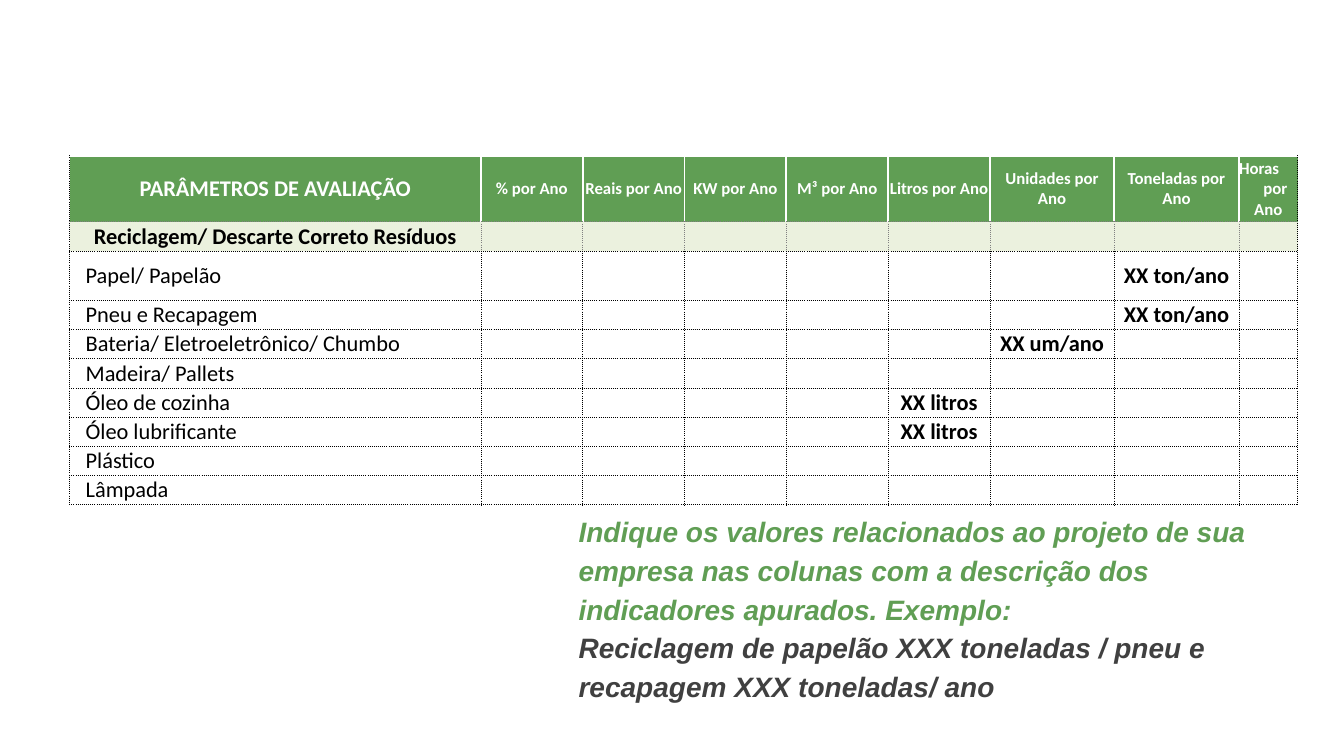
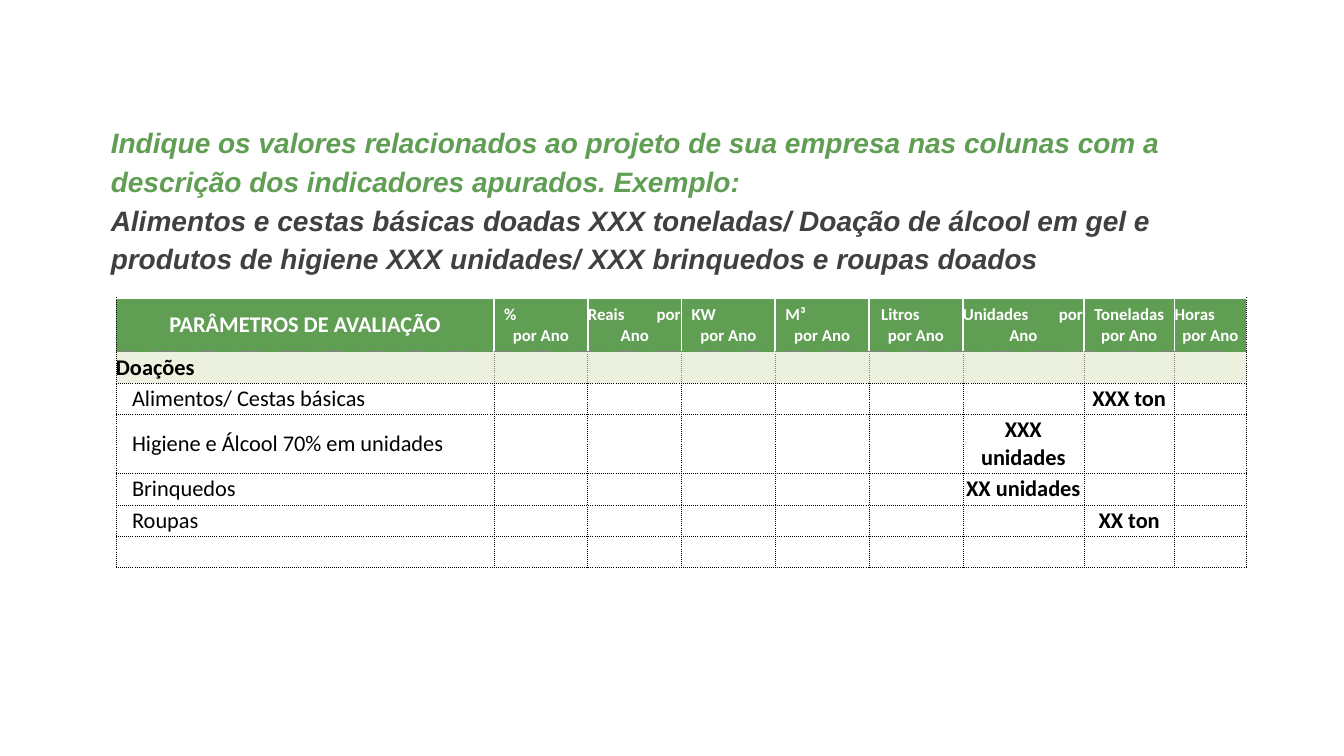
from lxml import etree
from pptx import Presentation
from pptx.dml.color import RGBColor
from pptx.enum import text
from pptx.oxml.ns import qn
from pptx.util import Inches, Pt

GREEN = RGBColor(0x60, 0x9E, 0x54)
PALE_GREEN = RGBColor(0xEB, 0xF1, 0xDE)
WHITE = RGBColor(0xFF, 0xFF, 0xFF)
BLACK = RGBColor(0, 0, 0)
GREY = RGBColor(0x80, 0x80, 0x80)
DARK = RGBColor(0x40, 0x40, 0x40)

LEFT, CENTER = text.PP_ALIGN.LEFT, text.PP_ALIGN.CENTER
BLACK_DOTS = (BLACK, 0.5, "dot")
GREY_DOTS = (GREY, 0.5, "dot")
WHITE_LINE = (WHITE, 1.5, "solid")

FIRST_HEADER = "PARÂMETROS DE AVALIAÇÃO"
PROMPT = ("Indique os valores relacionados ao projeto de sua empresa nas colunas "
          "com a descrição dos indicadores apurados. Exemplo:")
LITRES, UNITS, TONS = 5, 6, 7


def set_borders(cell, borders):
    """Draw the left, right, top and bottom borders, in that order."""
    tc_pr = cell._tc.get_or_add_tcPr()
    for side, (color, width, dash) in zip("LRTB", borders):
        ln = etree.SubElement(tc_pr, qn(f"a:ln{side}"), w=str(Pt(width)))
        fill = etree.SubElement(ln, qn("a:solidFill"))
        etree.SubElement(fill, qn("a:srgbClr"), val=str(color))
        etree.SubElement(ln, qn("a:prstDash"), val=dash)


def row_borders(row, first, last):
    """Borders of a cell, from its row and whether it ends the row."""
    if row == 0:
        inner, top, bottom = WHITE_LINE, WHITE_LINE, GREY_DOTS
    elif row == 1:
        inner, top, bottom = GREY_DOTS, GREY_DOTS, BLACK_DOTS
    else:
        inner = top = bottom = BLACK_DOTS
    return (BLACK_DOTS if first else inner, BLACK_DOTS if last else inner, top, bottom)


def add_run(p, words, size, color, bold=True, italic=False, font="Calibri"):
    r = p.add_run()
    r.text = words
    f = r.font
    f.name, f.size, f.bold, f.italic = font, Pt(size), bold, italic
    f.color.rgb = color


def write_cell(cell, words, size=16, color=BLACK, bold=True, align=CENTER):
    p = cell.text_frame.paragraphs[0]
    p.alignment = align
    add_run(p, words, size, color, bold)


def write_header(cell, lines, width):
    """Each line is centred text, or (text, indent); a tab reaches the right edge."""
    tf = cell.text_frame
    for i, line in enumerate(lines):
        p = tf.add_paragraph() if i else tf.paragraphs[0]
        words, indent = (line, None) if isinstance(line, str) else line
        p.alignment = CENTER if indent is None else LEFT
        if indent:
            p._p.get_or_add_pPr().set("marL", str(Inches(indent)))
        if "\t" in words:
            tabs = etree.SubElement(p._p.get_or_add_pPr(), qn("a:tabLst"))
            etree.SubElement(tabs, qn("a:tab"), pos=str(Inches(width - 0.01)), algn="r")
        add_run(p, words, 12, WHITE)


def add_indicator_table(s, left, top, widths, heights, headers, section, section_align, items):
    """Items are (label, column of the value or None, value)."""
    frame = s.shapes.add_table(len(heights), len(widths), Inches(left), Inches(top),
                               Inches(sum(widths)), Inches(sum(heights)))
    table = frame.table
    table.first_row = table.horz_banding = False
    for column, width in zip(table.columns, widths):
        column.width = Inches(width)
    for row, height in zip(table.rows, heights):
        row.height = Inches(height)

    write_cell(table.cell(0, 0), FIRST_HEADER, color=WHITE)
    for col, lines in enumerate(headers, 1):
        write_header(table.cell(0, col), lines, widths[col])
    write_cell(table.cell(1, 0), section, align=section_align)
    for row, (label, col, value) in enumerate(items, 2):
        write_cell(table.cell(row, 0), label, bold=False, align=LEFT)
        if col:
            write_cell(table.cell(row, col), value)

    for row in range(len(heights)):
        for col in range(len(widths)):
            cell = table.cell(row, col)
            cell.margin_left = cell.margin_right = cell.margin_top = cell.margin_bottom = 0
            if row > 1 and col == 0:
                cell.margin_left = Inches(0.16)
            cell.vertical_anchor = text.MSO_ANCHOR.MIDDLE
            set_borders(cell, row_borders(row, col == 0, col == len(widths) - 1))
            cell.fill.solid()
            cell.fill.fore_color.rgb = {0: GREEN, 1: PALE_GREEN}.get(row, WHITE)
            if not cell.text:
                p = cell.text_frame.paragraphs[0]
                etree.SubElement(p._p, qn("a:endParaRPr"), sz="1200")


def add_guidance(s, left, top, width, height, example):
    tf = s.shapes.add_textbox(Inches(left), Inches(top), Inches(width), Inches(height)).text_frame
    tf.word_wrap = True
    p = tf.paragraphs[0]
    p.line_spacing = 1.15
    p.space_after = Pt(4)
    add_run(p, PROMPT, 20, GREEN, italic=True, font="Arial")
    p.add_line_break()
    add_run(p, example, 20, DARK, italic=True, font="Arial")


def add_recycling_slide(s):
    headers = [["% por Ano"], ["Reais por Ano"], ["KW por Ano"], ["M³ por Ano"],
               ["Litros por Ano"], ["Unidades por Ano"], ["Toneladas por Ano"],
               [("Horas", 0), ("por", 0.24), "Ano"]]
    items = [
        ("Papel/ Papelão", TONS, "XX ton/ano"),
        ("Pneu e Recapagem", TONS, "XX ton/ano"),
        ("Bateria/ Eletroeletrônico/ Chumbo", UNITS, "XX um/ano"),
        ("Madeira/ Pallets", None, ""),
        ("Óleo de cozinha", LITRES, "XX litros"),
        ("Óleo lubrificante", LITRES, "XX litros"),
        ("Plástico", None, ""),
        ("Lâmpada", None, ""),
    ]
    add_indicator_table(s, 0.69, 1.55, [4.08] + [1.01] * 5 + [1.23, 1.24, 0.58],
                        [0.65, 0.29, 0.49] + [0.29] * 7, headers,
                        "Reciclagem/ Descarte Correto Resíduos", CENTER, items)
    add_guidance(s, 5.64, 5.01, 7.24, 2.04,
                 "Reciclagem de papelão XXX toneladas / pneu e recapagem XXX toneladas/ ano")


def add_donations_slide(s):
    headers = [[("%", 0.1), "por Ano"], [("Reais\tpor", 0), "Ano"], [("KW", 0.1), "por Ano"],
               [("M³", 0.1), "por Ano"], [("Litros", 0.12), "por Ano"],
               [("Unidades\tpor", 0), "Ano"], ["Toneladas por Ano"], [("Horas", 0), "por Ano"]]
    items = [
        ("Alimentos/ Cestas básicas", TONS, "XXX ton"),
        ("Higiene e Álcool 70% em unidades", UNITS, "XXX unidades"),
        ("Brinquedos", UNITS, "XX unidades"),
        ("Roupas", TONS, "XX ton"),
    ]
    add_indicator_table(s, 1.15, 2.96, [3.75] + [0.93] * 5 + [1.2, 0.9, 0.71],
                        [0.53, 0.31, 0.31, 0.59] + [0.31] * 3, headers,
                        "Doações", LEFT, items)
    add_guidance(s, 1, 1.15, 10.79, 1.65,
                 "Alimentos e cestas básicas doadas XXX toneladas/ Doação de álcool em gel e "
                 "produtos de higiene XXX unidades/ XXX brinquedos e roupas doados")


def main():
    prs = Presentation()
    prs.slide_width, prs.slide_height = Inches(13.33), Inches(7.5)
    for build in (add_recycling_slide, add_donations_slide):
        build(prs.slides.add_slide(prs.slide_layouts[6]))
    prs.save("out.pptx")


if __name__ == "__main__":
    main()
